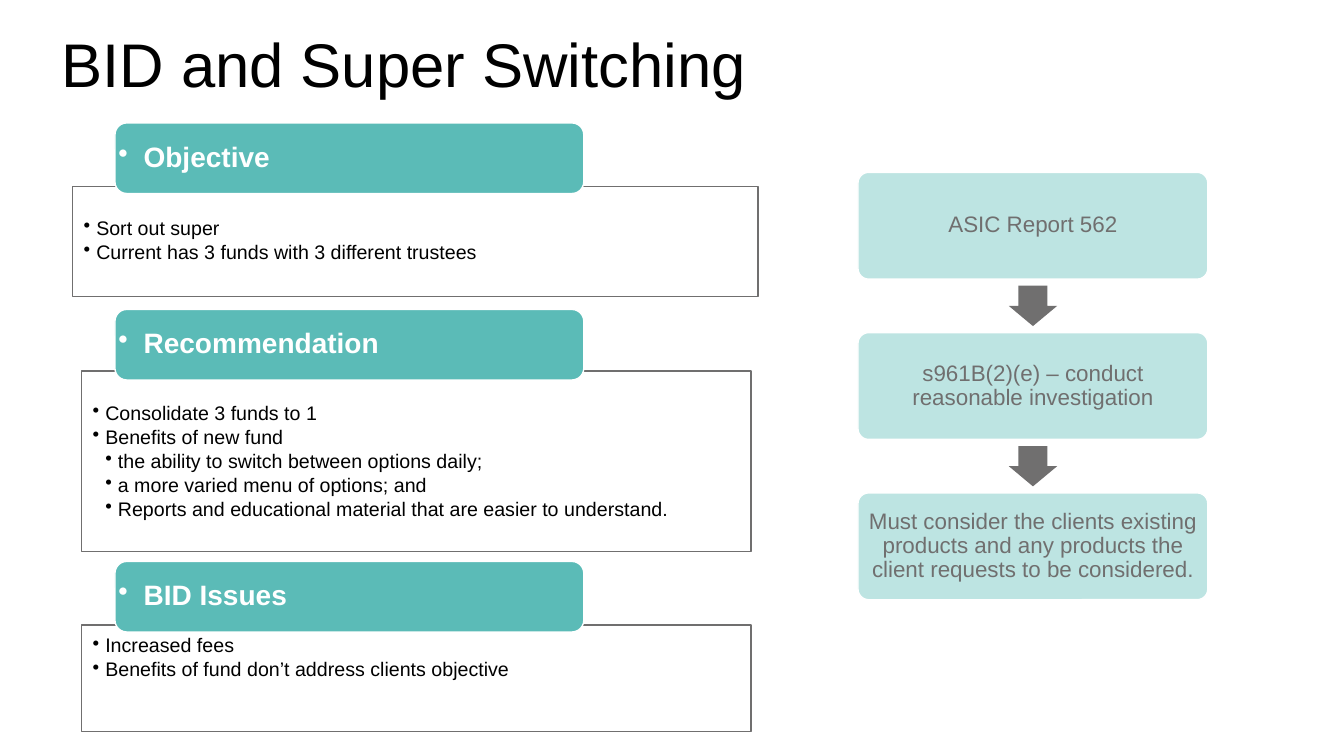
import dataclasses
import typing

import lxml.etree
import pptx
import pptx.dml.color
import pptx.enum.shapes
import pptx.enum.text
import pptx.oxml.ns
import pptx.util

Inches = pptx.util.Inches
ShapeType = pptx.enum.shapes.MSO_SHAPE
Align = pptx.enum.text.PP_ALIGN
Anchor = pptx.enum.text.MSO_ANCHOR


@dataclasses.dataclass(frozen=True)
class Theme:
    font: str = "Arial"
    teal: str = "5BBBB7"
    pale_teal: str = "BDE4E2"
    grey: str = "706F6F"
    white: str = "FFFFFF"
    black: str = "000000"
    title_size: int = 44
    heading_size: int = 20
    step_size: int = 16
    detail_size: int = 14


@dataclasses.dataclass(frozen=True)
class Box:
    left: float
    top: float
    width: float
    height: float


@dataclasses.dataclass(frozen=True)
class Line:
    text: str
    level: int = 0


@dataclasses.dataclass(frozen=True)
class Section:
    heading: str
    heading_top: float
    panel: Box
    text_top: float  # inset above the first line
    lines: tuple[Line, ...]


@dataclasses.dataclass(frozen=True)
class TextStyle:
    size: int
    color: str
    bold: bool = False
    align: typing.Any = Align.LEFT
    anchor: typing.Any = Anchor.MIDDLE
    space_before: float = 0
    hanging: float = 0  # bullet indent, no bullet when zero


THEME = Theme()
TITLE = TextStyle(THEME.title_size, THEME.black)
HEADING = TextStyle(THEME.heading_size, THEME.white, bold=True, hanging=0.25)
DETAIL = TextStyle(THEME.detail_size, THEME.black, anchor=Anchor.TOP,
                   space_before=2, hanging=0.125)
STEP = TextStyle(THEME.step_size, THEME.grey, align=Align.CENTER)

SECTIONS = (
    Section("Objective", 1.22, Box(0.72, 1.85, 6.8, 1.09), 0.32, (
        Line("Sort out super"),
        Line("Current has 3 funds with 3 different trustees"),
    )),
    Section("Recommendation", 3.07, Box(0.81, 3.68, 6.64, 1.79), 0.32, (
        Line("Consolidate 3 funds to 1"),
        Line("Benefits of new fund"),
        Line("the ability to switch between options daily;", 1),
        Line("a more varied menu of options; and", 1),
        Line("Reports and educational material that are easier to understand.", 1),
    )),
    Section("BID Issues", 5.57, Box(0.81, 6.2, 6.64, 1.06), 0.11, (
        Line("Increased fees"),
        Line("Benefits of fund don’t address clients objective"),
    )),
)

STEPS = (
    "ASIC Report 562",
    "s961B(2)(e) – conduct reasonable investigation",
    "Must consider the clients existing products and any products the "
    "client requests to be considered.",
)
FIRST_STEP = Box(8.51, 1.71, 3.47, 1.06)
STEP_PITCH = 1.59
ARROW_WIDTH, ARROW_HEIGHT = 0.48, 0.4


def rgb(color: str) -> pptx.dml.color.RGBColor:
    return pptx.dml.color.RGBColor.from_string(color)


def add_shape(slide, kind, box: Box, fill: str, outline: str | None = None,
              adjustments: tuple[float, ...] = ()):
    shape = slide.shapes.add_shape(kind, Inches(box.left), Inches(box.top),
                                   Inches(box.width), Inches(box.height))
    shape.shadow.inherit = False
    shape.fill.solid()
    shape.fill.fore_color.rgb = rgb(fill)
    if outline:
        shape.line.color.rgb = rgb(outline)
        shape.line.width = pptx.util.Pt(1)
    else:
        shape.line.fill.background()
    for index, value in enumerate(adjustments):
        shape.adjustments[index] = value
    return shape


def set_opacity(shape, percent: int) -> None:
    color = shape.fill._xPr.find(".//" + pptx.oxml.ns.qn("a:srgbClr"))
    alpha = lxml.etree.SubElement(color, pptx.oxml.ns.qn("a:alpha"))
    alpha.set("val", str(percent * 1000))


def add_bullet(paragraph, hanging: float, level: int) -> None:
    properties = paragraph._p.get_or_add_pPr()
    properties.set("marL", str(Inches(hanging * (level + 1))))
    properties.set("indent", str(-Inches(hanging)))
    bullet = lxml.etree.SubElement(properties, pptx.oxml.ns.qn("a:buChar"))
    bullet.set("char", "•")


def write_text(shape, lines: tuple[Line, ...], style: TextStyle,
               inset: float, top_inset: float | None = None) -> None:
    frame = shape.text_frame
    frame.word_wrap = True
    frame.vertical_anchor = style.anchor
    frame.margin_left = frame.margin_right = frame.margin_bottom = Inches(inset)
    frame.margin_top = Inches(inset if top_inset is None else top_inset)
    for index, line in enumerate(lines):
        paragraph = frame.add_paragraph() if index else frame.paragraphs[0]
        if style.hanging:
            add_bullet(paragraph, style.hanging, line.level)
        paragraph.level = line.level
        paragraph.alignment = style.align
        paragraph.line_spacing = 0.9
        paragraph.space_before = pptx.util.Pt(style.space_before if index else 0)
        run = paragraph.add_run()
        run.text = line.text
        run.font.name = THEME.font
        run.font.size = pptx.util.Pt(style.size)
        run.font.bold = style.bold
        run.font.color.rgb = rgb(style.color)


def draw_section(slide, section: Section) -> None:
    panel = add_shape(slide, ShapeType.RECTANGLE, section.panel,
                      THEME.white, THEME.grey)
    set_opacity(panel, 90)
    write_text(panel, section.lines, DETAIL, 0.11, section.text_top)
    heading = add_shape(slide, ShapeType.ROUNDED_RECTANGLE,
                        Box(1.14, section.heading_top, 4.65, 0.7),
                        THEME.teal, THEME.white, (0.167,))
    write_text(heading, (Line(section.heading),), HEADING, 0)


def draw_step(slide, index: int, text: str) -> None:
    box = dataclasses.replace(FIRST_STEP, top=FIRST_STEP.top + index * STEP_PITCH)
    step = add_shape(slide, ShapeType.ROUNDED_RECTANGLE, box,
                     THEME.pale_teal, THEME.white, (0.1,))
    write_text(step, (Line(text),), STEP, 0.07)
    if index:
        # Arrow centred in the gap above this step
        gap = STEP_PITCH - box.height
        arrow = Box(box.left + (box.width - ARROW_WIDTH) / 2,
                    box.top - (gap + ARROW_HEIGHT) / 2, ARROW_WIDTH, ARROW_HEIGHT)
        add_shape(slide, ShapeType.DOWN_ARROW, arrow, THEME.grey,
                  adjustments=(0.6, 0.5))


def main() -> None:
    presentation = pptx.Presentation()
    presentation.slide_width = Inches(13.33)
    presentation.slide_height = Inches(7.5)
    slide = presentation.slides.add_slide(presentation.slide_layouts[6])

    # Title
    title = slide.shapes.add_textbox(Inches(0.56), Inches(-0.06),
                                     Inches(11.5), Inches(1.45))
    write_text(title, (Line("BID and Super Switching"),), TITLE, 0.05)

    # Investigation steps on the right
    for index, text in enumerate(STEPS):
        draw_step(slide, index, text)

    # Advice sections on the left
    for section in SECTIONS:
        draw_section(slide, section)

    presentation.save("out.pptx")


if __name__ == "__main__":
    main()
